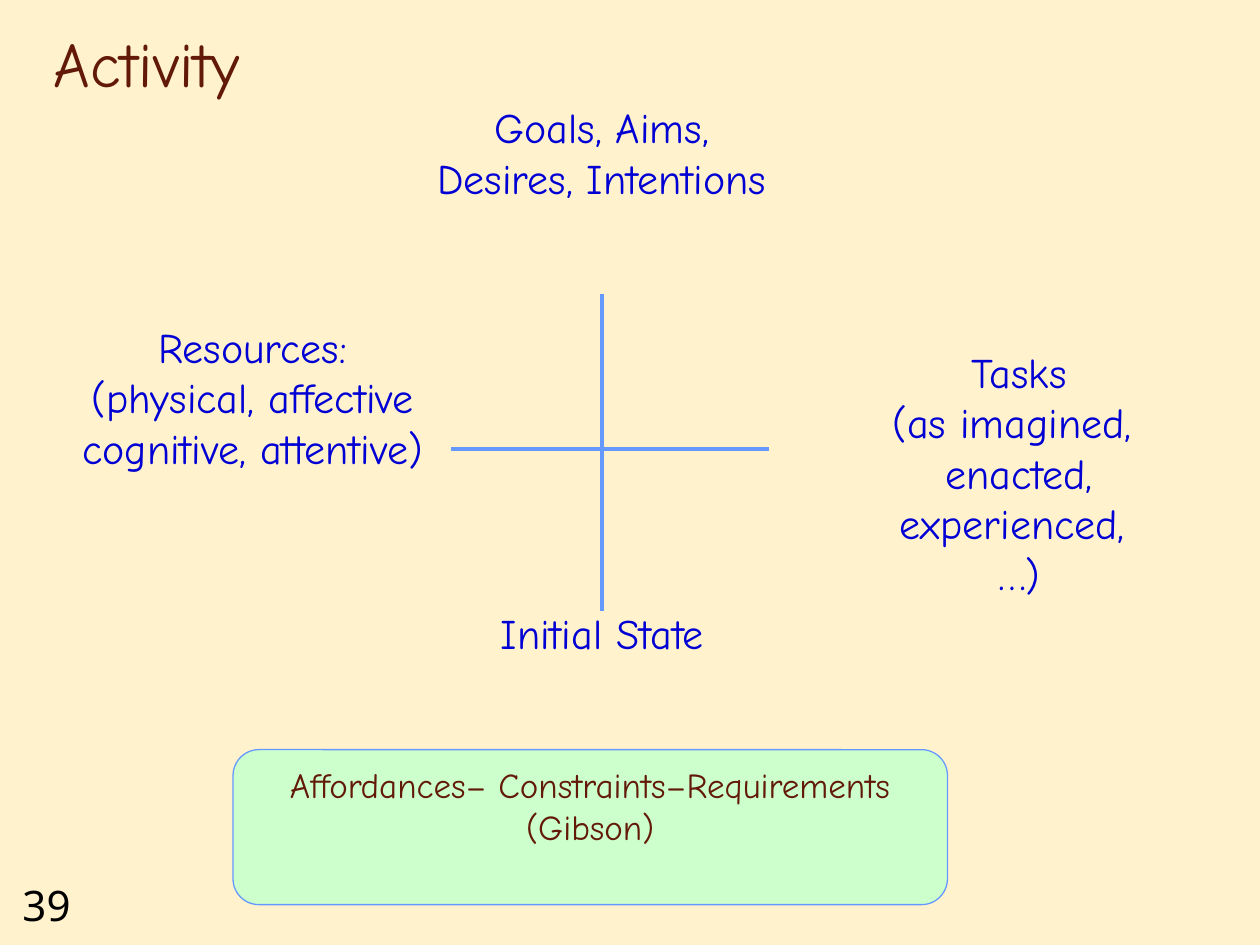
from dataclasses import dataclass

from lxml.etree import SubElement
from pptx import Presentation
from pptx.dml.color import RGBColor
from pptx.enum.shapes import MSO_CONNECTOR, MSO_SHAPE
from pptx.enum.text import MSO_ANCHOR, PP_ALIGN
from pptx.oxml.ns import qn
from pptx.util import Inches, Pt


@dataclass(frozen=True)
class Theme:
    back: str = "FFF2CC"
    brown: str = "631908"
    blue: str = "0000D4"
    black: str = "000000"
    line: str = "6699FF"
    green: str = "CCFFCC"
    font: str = "Comic Neue"
    plain: str = "Noto Sans"
    title: int = 36
    body: int = 24
    note: int = 20


THEME = Theme()


def color(code):
    return RGBColor.from_string(code)


def write(shape, text, size, ink, font=THEME.font, align=PP_ALIGN.CENTER,
          anchor=MSO_ANCHOR.TOP):
    frame = shape.text_frame
    frame.word_wrap = True
    frame.vertical_anchor = anchor
    frame.text = text
    for para in frame.paragraphs:
        para.alignment = align
        for run in para.runs:
            run.font.size = Pt(size)
            run.font.name = font
            run.font.color.rgb = color(ink)


def label(slide, box, text, size=THEME.body, ink=THEME.blue, **style):
    shape = slide.shapes.add_textbox(*map(Inches, box))
    write(shape, text, size, ink, **style)


def rule(slide, *ends):
    line = slide.shapes.add_connector(MSO_CONNECTOR.STRAIGHT, *map(Inches, ends))
    line.line.color.rgb = color(THEME.line)
    line.line.width = Pt(2.25)
    SubElement(line._element.spPr, qn("a:effectLst"))


def cross(slide, box):
    """Two axes; the level one sits just above the middle of the box."""
    left, top, width, height = box
    mid = left + width / 2 - 0.06
    level = top + height / 2 - 0.03
    rule(slide, mid, top, mid, top + height)
    rule(slide, left, level, left + width, level)


def panel(slide, box, text):
    shape = slide.shapes.add_shape(MSO_SHAPE.ROUNDED_RECTANGLE, *map(Inches, box))
    shape.shadow.inherit = False
    shape.fill.solid()
    shape.fill.fore_color.rgb = color(THEME.green)
    shape.line.color.rgb = color(THEME.line)
    shape.line.width = Pt(0.75)
    write(shape, text, THEME.note, THEME.brown)


def main():
    deck = Presentation()
    deck.slide_width, deck.slide_height = Inches(10), Inches(7.5)
    slide = deck.slides.add_slide(deck.slide_layouts[6])
    slide.background.fill.solid()
    slide.background.fill.fore_color.rgb = color(THEME.back)

    # Page number and title
    label(slide, (0.08, 6.93, 0.75, 0.5), "39", ink=THEME.black,
          font=THEME.plain, align=PP_ALIGN.LEFT)
    label(slide, (0.33, 0.17, 8.5, 0.67), "Activity", THEME.title, THEME.brown,
          align=PP_ALIGN.LEFT, anchor=MSO_ANCHOR.BOTTOM)

    # Axes with a label at each end
    cross(slide, (3.58, 2.33, 2.52, 2.52))
    ends = [
        ((3.12, 0.76, 3.31, 0.91), "Goals, Aims,\vDesires, Intentions"),
        ((6.06, 2.7, 4.06, 2.12),
         "Tasks\v(as imagined, \venacted,\vexperienced, \n…)"),
        ((0.39, 2.5, 3.23, 1.31),
         "Resources:\v(physical, affective cognitive, attentive)"),
        ((3.52, 4.77, 2.52, 0.5), "Initial State"),
    ]
    for box, text in ends:
        label(slide, box, text)

    # Closing panel
    panel(slide, (1.85, 5.95, 5.67, 1.23),
          "Affordances– Constraints–Requirements\n(Gibson)")

    deck.save("out.pptx")


if __name__ == "__main__":
    main()
